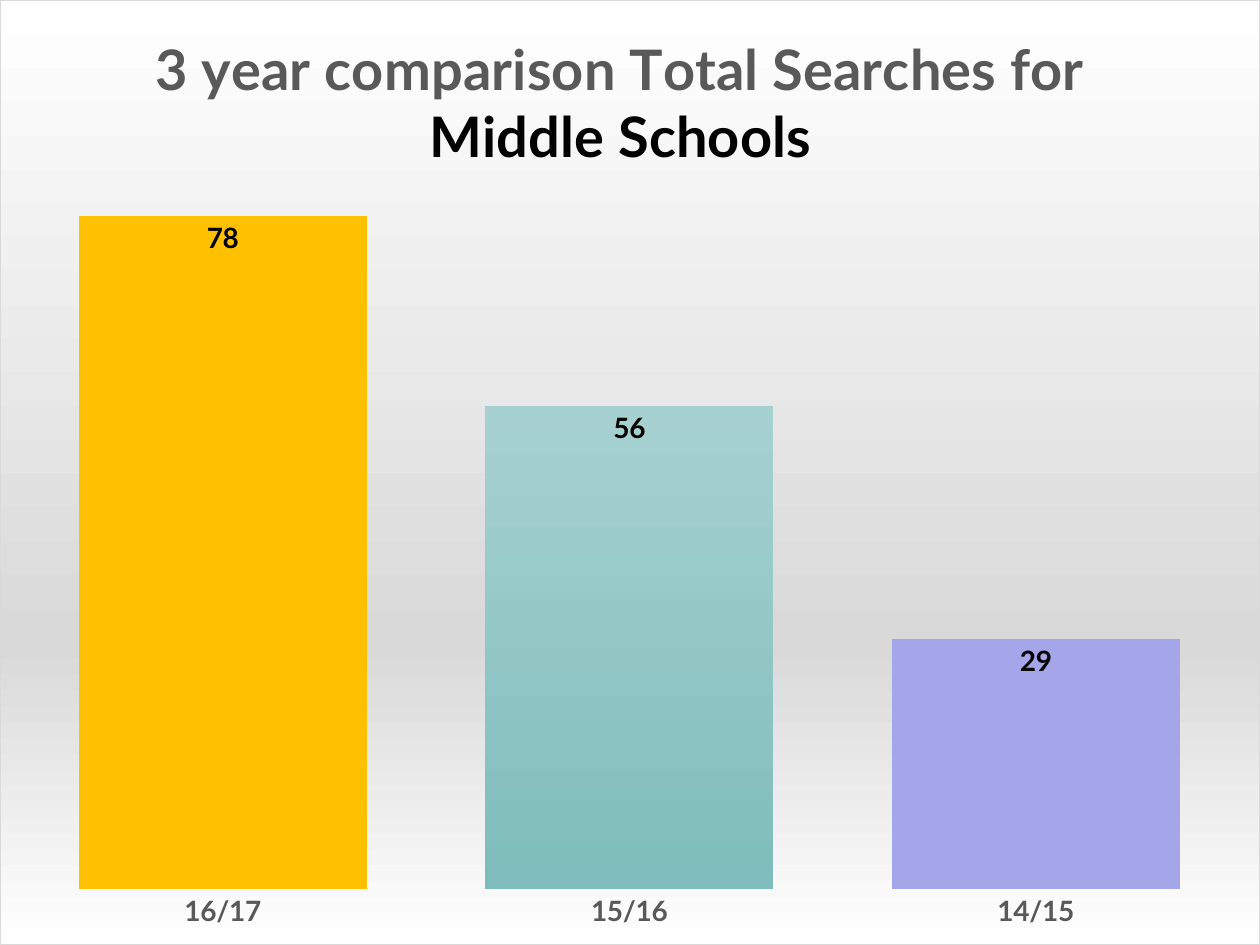
from lxml import etree
from pptx import Presentation
from pptx.chart.data import CategoryChartData
from pptx.dml.color import RGBColor
from pptx.enum.chart import XL_CHART_TYPE, XL_LABEL_POSITION, XL_TICK_MARK
from pptx.oxml import parse_xml
from pptx.oxml.ns import nsdecls, qn
from pptx.util import Inches, Pt

COLUMN = XL_CHART_TYPE.COLUMN_CLUSTERED
INSIDE_END = XL_LABEL_POSITION.INSIDE_END
NO_TICKS = XL_TICK_MARK.NONE
COLORS = {"black": "000000", "gray": "595959", "silver": "D9D9D9", "white": "FFFFFF",
          "amber": "FFC000", "teal_light": "A6D1D0", "teal": "7EBDBB", "lilac": "A5A5E9"}


class SlideBuilder:
    font = "Lato"

    def __init__(self, prs):
        self.s = prs.slides.add_slide(prs.slide_layouts[6])

    def color(self, name):
        return RGBColor.from_string(COLORS[name])

    def style(self, font, size, color="black", bold=True):
        font.name, font.size, font.bold = self.font, Pt(size), bold
        font.color.rgb = self.color(color)

    def gradient(self, stops):
        """Return a top-to-bottom gradient fill for (percent, colour name) stops."""
        marks = "".join(f'<a:gs pos="{pos * 1000}"><a:srgbClr val="{COLORS[name]}"/></a:gs>'
                        for pos, name in stops)
        return parse_xml(f'<a:gradFill {nsdecls("a")} rotWithShape="1"><a:gsLst>{marks}</a:gsLst>'
                         '<a:lin ang="5400000" scaled="0"/></a:gradFill>')

    def layout(self, parent, x, y, w=None, h=None):
        """Place a chart part by fractions of the chart area."""
        for old in parent.findall(qn("c:layout")):
            parent.remove(old)
        values = {"xMode": "edge", "yMode": "edge", "x": x, "y": y}
        if w is not None:
            values = {"layoutTarget": "inner", **values, "w": w, "h": h}
        layout = etree.Element(qn("c:layout"))
        manual = etree.SubElement(layout, qn("c:manualLayout"))
        for tag, value in values.items():
            etree.SubElement(manual, qn(f"c:{tag}")).set("val", str(value))
        text = parent.find(qn("c:tx"))
        if text is None:
            parent.insert(0, layout)
        else:
            text.addnext(layout)

    def column_chart(self, box, categories, values):
        data = CategoryChartData()
        data.categories = categories
        data.add_series("Series 1", values)
        chart = self.s.shapes.add_chart(COLUMN, *map(Inches, box), data).chart
        self.style(chart.font, 10, bold=False)
        chart.has_legend = False
        return chart

    def chart_area(self, chart, stops, border):
        sp_pr = parse_xml(f'<c:spPr {nsdecls("c", "a")}><a:ln w="{Pt(0.75)}"><a:solidFill>'
                          f'<a:srgbClr val="{COLORS[border]}"/></a:solidFill></a:ln></c:spPr>')
        sp_pr.insert(0, self.gradient(stops))
        chart.element.find(qn("c:chart")).addnext(sp_pr)

    def chart_title(self, chart, lines, x, y):
        title = chart.chart_title
        tf = title.text_frame
        tf.text = "\n".join(text for text, _ in lines)
        for p, (_, color) in zip(tf.paragraphs, lines):
            self.style(p.runs[0].font, 32, color)
        self.layout(chart.element.find(".//" + qn("c:title")), x, y)

    def axes(self, chart, maximum):
        axis = chart.category_axis
        axis.major_tick_mark = axis.minor_tick_mark = NO_TICKS
        axis.format.line.fill.background()
        self.style(axis.tick_labels.font, 16, "gray")
        axis = chart.value_axis
        axis.minimum_scale, axis.maximum_scale = 0, maximum
        axis.has_major_gridlines = False
        axis.visible = False

    def columns(self, chart, stops, point_colors):
        plot = chart.plots[0]
        plot.gap_width = 41
        plot.vary_by_categories = False
        series = plot.series[0]
        series.format.fill.background()
        sp_pr = series.format.fill._xPr
        sp_pr.replace(sp_pr.find(qn("a:noFill")), self.gradient(stops))
        for index, color in point_colors.items():
            fill = series.points[index].format.fill
            fill.solid()
            fill.fore_color.rgb = self.color(color)
        labels = series.data_labels
        labels.show_value = True
        labels.position = INSIDE_END
        self.style(labels.font, 16)


def main():
    prs = Presentation()
    prs.slide_width, prs.slide_height = Inches(10), Inches(7.5)
    slide = SlideBuilder(prs)
    chart = slide.column_chart((0, 0, 10, 7.5), ["16/17", "15/16", "14/15"], [78, 56, 29])
    slide.chart_area(chart, [(0, "white"), (68, "silver"), (100, "white")], "silver")
    slide.chart_title(chart, [("3 year comparison Total Searches for", "gray"),
                              ("Middle Schools", "black")], 0.12, 0.03)
    slide.axes(chart, 90)
    slide.columns(chart, [(0, "teal_light"), (100, "teal")], {0: "amber", 2: "lilac"})
    slide.layout(chart.element.find(".//" + qn("c:plotArea")), 0.015, 0.118, 0.969, 0.824)
    prs.save("out.pptx")


if __name__ == "__main__":
    main()
